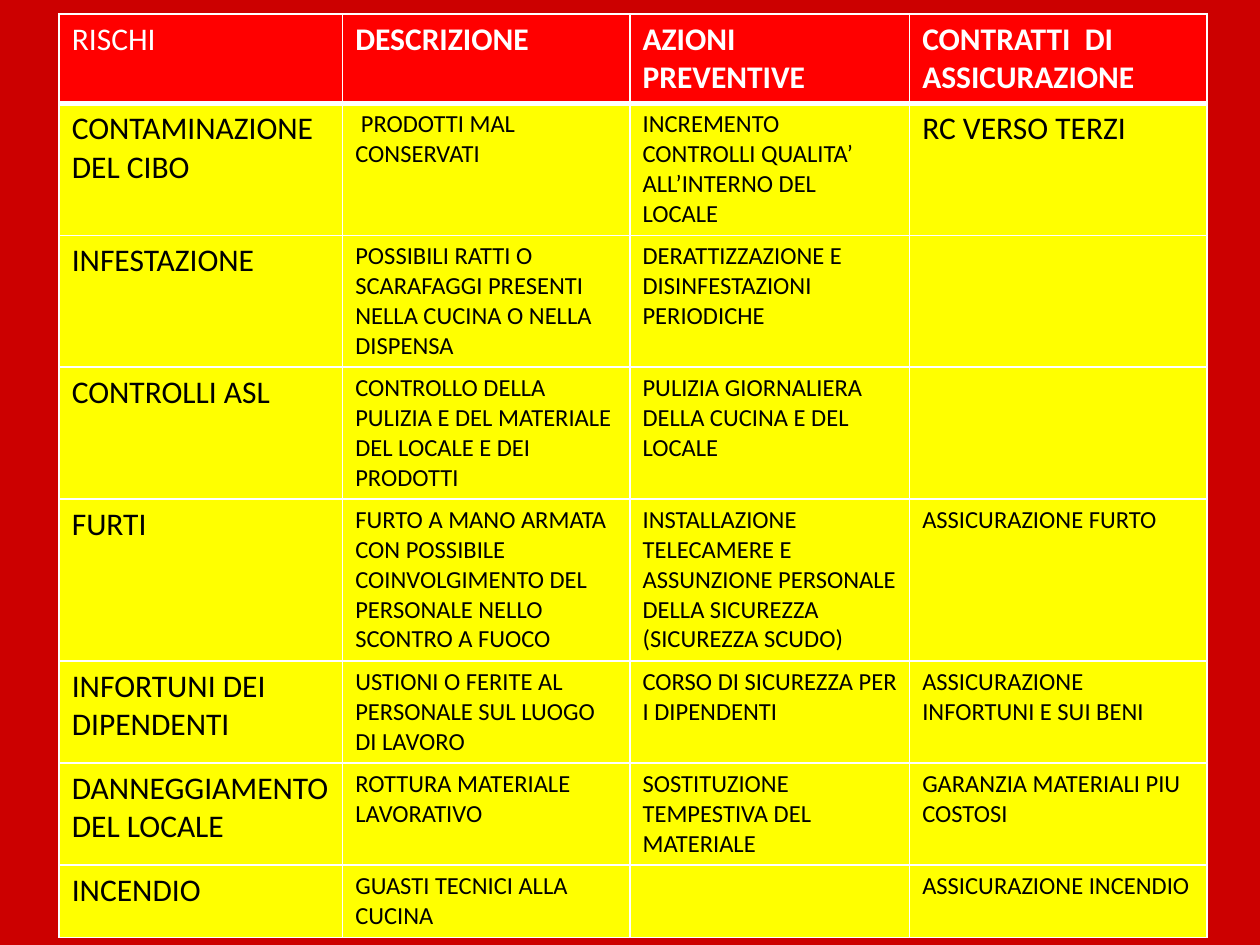
from lxml.etree import SubElement, Element
from pptx import Presentation
from pptx.dml.color import RGBColor as Rgb
from pptx.oxml.ns import qn
from pptx.util import Inches, Pt

RED, YELLOW, WHITE, BLACK, BACKDROP = "FF0000", "FFFF00", "FFFFFF", "000000", "CC0000"
FONT = "Calibri"
TABLE_BOX = (0.47, 0.11, 9.11, 7.23)
COLUMN_WIDTHS = (2.25, 2.28, 2.22, 2.36)
ROW_HEIGHTS = (0.53, 0.61, 0.78, 0.78, 0.96, 0.61, 0.53, 0.43)
LARGE, SMALL = 18, 14
THIN, THICK = 1, 3

RISKS = (
    ("RISCHI", "DESCRIZIONE", "AZIONI PREVENTIVE", "CONTRATTI  DI ASSICURAZIONE"),
    ("CONTAMINAZIONE DEL CIBO", " PRODOTTI MAL CONSERVATI",
     "INCREMENTO CONTROLLI QUALITA’ ALL’INTERNO DEL LOCALE", "RC VERSO TERZI"),
    ("INFESTAZIONE",
     "POSSIBILI RATTI O SCARAFAGGI PRESENTI NELLA CUCINA O NELLA DISPENSA",
     "DERATTIZZAZIONE E DISINFESTAZIONI PERIODICHE", ""),
    ("CONTROLLI ASL",
     "CONTROLLO DELLA PULIZIA E DEL MATERIALE DEL LOCALE E DEI PRODOTTI",
     "PULIZIA GIORNALIERA DELLA CUCINA E DEL LOCALE", ""),
    ("FURTI",
     "FURTO A MANO ARMATA CON POSSIBILE COINVOLGIMENTO DEL PERSONALE NELLO "
     "SCONTRO A FUOCO",
     "INSTALLAZIONE TELECAMERE E ASSUNZIONE PERSONALE DELLA SICUREZZA "
     "(SICUREZZA SCUDO)", "ASSICURAZIONE FURTO"),
    ("INFORTUNI DEI DIPENDENTI", "USTIONI O FERITE AL PERSONALE SUL LUOGO DI LAVORO",
     "CORSO DI SICUREZZA PER I DIPENDENTI", "ASSICURAZIONE INFORTUNI E SUI BENI"),
    ("DANNEGGIAMENTO DEL LOCALE", "ROTTURA MATERIALE LAVORATIVO",
     "SOSTITUZIONE TEMPESTIVA DEL MATERIALE", "GARANZIA MATERIALI PIU COSTOSI"),
    ("INCENDIO", "GUASTI TECNICI ALLA CUCINA", "", "ASSICURAZIONE INCENDIO"),
)


def paint(fill, color):
    fill.solid()
    fill.fore_color.rgb = Rgb.from_string(color)


def add_borders(cell, top, bottom):
    """Draw white cell edges; the side edges are always thin."""
    properties = cell._tc.get_or_add_tcPr()
    edges = (("L", THIN), ("R", THIN), ("T", top), ("B", bottom))
    for place, (side, width) in enumerate(edges):
        line = Element(qn(f"a:ln{side}"), w=str(Pt(width)))
        SubElement(SubElement(line, qn("a:solidFill")), qn("a:srgbClr"), val=WHITE)
        properties.insert(place, line)


def write(cell, text, size, color, bold):
    span = cell.text_frame.paragraphs[0].add_run()
    span.text = text
    span.font.name, span.font.size, span.font.bold = FONT, Pt(size), bold
    span.font.color.rgb = Rgb.from_string(color)


def add_risk_table(page, box):
    frame = page.shapes.add_table(len(RISKS), len(COLUMN_WIDTHS), *map(Inches, box))
    table = frame.table
    table.horz_banding = False
    for column, width in zip(table.columns, COLUMN_WIDTHS):
        column.width = Inches(width)
    for row, height in zip(table.rows, ROW_HEIGHTS):
        row.height = Inches(height)
    frame.height = Inches(box[3])

    for r, texts in enumerate(RISKS):
        header = r == 0
        for c, text in enumerate(texts):
            cell = table.cell(r, c)
            paint(cell.fill, RED if header else YELLOW)
            add_borders(cell, THICK if r == 1 else THIN, THICK if header else THIN)
            if text:
                large = header or c == 0 or text == "RC VERSO TERZI"
                write(cell, text, LARGE if large else SMALL,
                      WHITE if header else BLACK, header and c > 0)


def main():
    deck = Presentation()
    deck.slide_width, deck.slide_height = Inches(10), Inches(7.5)
    page = deck.slides.add_slide(deck.slide_layouts[6])
    paint(page.background.fill, BACKDROP)
    add_risk_table(page, TABLE_BOX)
    deck.save("out.pptx")


if __name__ == "__main__":
    main()
